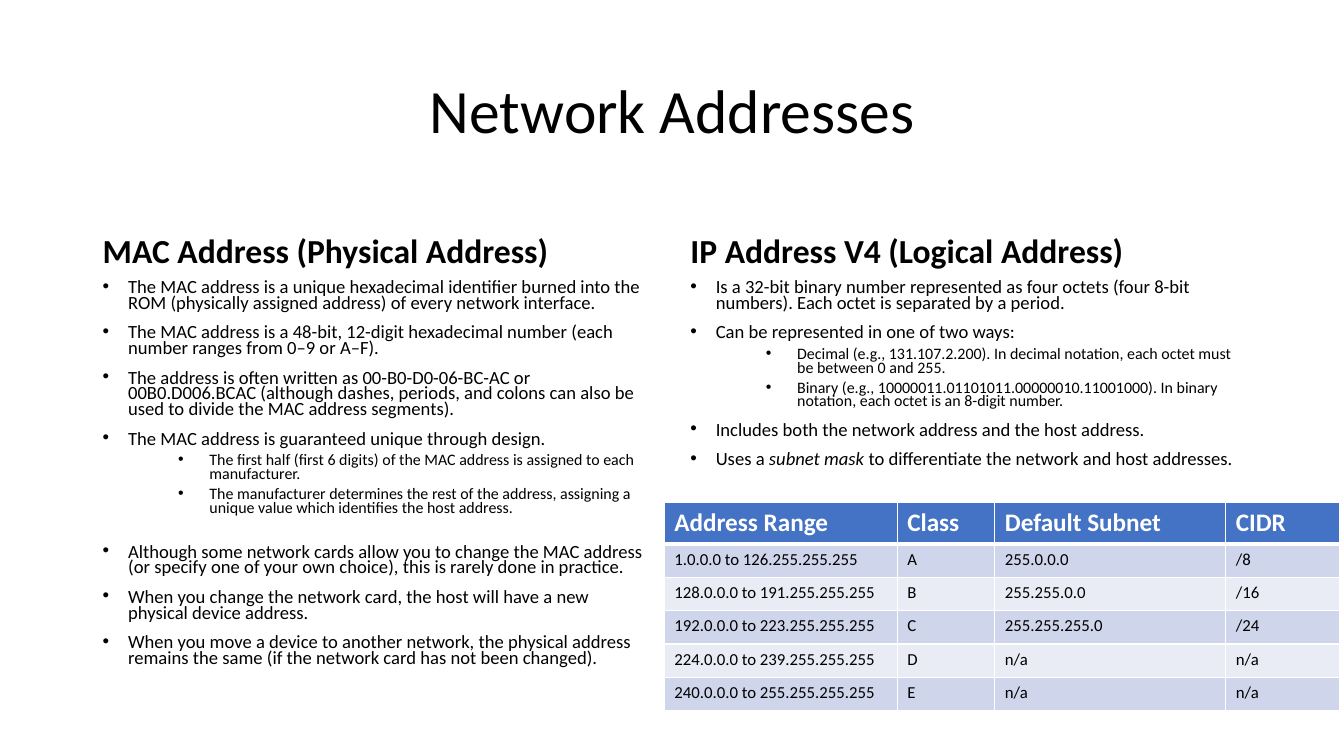
from dataclasses import dataclass

from lxml import etree
from pptx import Presentation
from pptx import util as u
from pptx.dml.color import RGBColor
from pptx.enum import text
from pptx.oxml import ns

FONT = "Calibri"
BLACK, WHITE, BLUE = "000000", "FFFFFF", "4472C4"
BANDS = ("CFD5EA", "E9EBF5")


@dataclass
class Box:
    left: float
    top: float
    width: float
    height: float


@dataclass
class Bullet:
    text: str  # parts between asterisks are italic
    size: float = 13.3
    before: float = 10
    margin: float = 0.64
    hang: float = 0.64


@dataclass
class Column:
    left: float
    width: float
    heading: str
    bullets: list[Bullet]


def sub_bullet(words: str) -> Bullet:
    return Bullet(words, size=11.4, before=5, margin=2.69, hang=0.79)


COLUMNS = [
    Column(2.34, 14.33, "MAC Address (Physical Address)", [
        Bullet("The MAC address is a unique hexadecimal identifier burned into the ROM "
               "(physically assigned address) of every network interface."),
        Bullet("The MAC address is a 48-bit, 12-digit hexadecimal number "
               "(each number ranges from 0–9 or A–F)."),
        Bullet("The address is often written as 00-B0-D0-06-BC-AC or 00B0.D006.BCAC (although "
               "dashes, periods, and colons can also be used to divide the MAC address segments)."),
        Bullet("The MAC address is guaranteed unique through design."),
        sub_bullet("The first half (first 6 digits) of the MAC address is assigned to each "
                   "manufacturer."),
        sub_bullet("The manufacturer determines the rest of the address, assigning a unique "
                   "value which identifies the host address."),
        Bullet("Although some network cards allow you to change the MAC address (or specify "
               "one of your own choice), this is rarely done in practice.", before=21.5),
        Bullet("When you change the network card, the host will have a new physical device "
               "address."),
        Bullet("When you move a device to another network, the physical address remains the "
               "same (if the network card has not been changed)."),
    ]),
    Column(17.15, 14.4, "IP Address V4 (Logical Address)", [
        Bullet("Is a 32-bit binary number represented as four octets (four 8-bit numbers). "
               "Each octet is separated by a period."),
        Bullet("Can be represented in one of two ways:"),
        sub_bullet("Decimal (e.g., 131.107.2.200). In decimal notation, each octet must be "
                   "between 0 and 255."),
        sub_bullet("Binary (e.g., 10000011.01101011.00000010.11001000). In binary notation, "
                   "each octet is an 8-digit number."),
        Bullet("Includes both the network address and the host address."),
        Bullet("Uses a *subnet mask* to differentiate the network and host addresses."),
    ]),
]

CLASSES = [
    ("Address Range", "Class", "Default Subnet", "CIDR"),
    ("1.0.0.0 to 126.255.255.255", "A", "255.0.0.0", "/8"),
    ("128.0.0.0 to 191.255.255.255", "B", "255.255.0.0", "/16"),
    ("192.0.0.0 to 223.255.255.255", "C", "255.255.255.0", "/24"),
    ("224.0.0.0 to 239.255.255.255", "D", "n/a", "n/a"),
    ("240.0.0.0 to 255.255.255.255", "E", "n/a", "n/a"),
]
CLASS_WIDTHS = (5.87, 2.46, 5.82, 2.87)
HEADER_HEIGHT, ROW_HEIGHT = 1.04, 0.84


def rgb(value: str) -> RGBColor:
    return RGBColor.from_string(value)


def style(p, size: float, color: str = BLACK, bold: bool = False) -> None:
    for r in p.runs:
        r.font.name = FONT
        r.font.size = u.Pt(size)
        r.font.bold = bold
        r.font.color.rgb = rgb(color)


def add_frame(slide, box: Box, anchor):
    sp = slide.shapes.add_textbox(u.Cm(box.left), u.Cm(box.top), u.Cm(box.width), u.Cm(box.height))
    tf = sp.text_frame
    tf.word_wrap = True
    tf.vertical_anchor = anchor
    return tf


def add_heading(slide, box: Box, words: str, size: float, anchor, align, bold: bool) -> None:
    p = add_frame(slide, box, anchor).paragraphs[0]
    p.text = words
    p.alignment = align
    p.line_spacing = 0.9
    style(p, size, bold=bold)


def add_bullets(slide, box: Box, bullets: list[Bullet]) -> None:
    tf = add_frame(slide, box, text.MSO_ANCHOR.TOP)
    for i, bullet in enumerate(bullets):
        p = tf.add_paragraph() if i else tf.paragraphs[0]
        for j, part in enumerate(bullet.text.split("*")):
            r = p.add_run()
            r.text = part
            r.font.italic = j % 2 == 1
        style(p, bullet.size)
        p.line_spacing = 0.7
        p.space_before = u.Pt(bullet.before)
        pPr = p._p.get_or_add_pPr()
        pPr.set("marL", str(u.Cm(bullet.margin)))
        pPr.set("indent", str(-u.Cm(bullet.hang)))
        etree.SubElement(pPr, ns.qn("a:buFont")).set("typeface", "Arial")
        etree.SubElement(pPr, ns.qn("a:buChar")).set("char", "•")


def set_borders(cell, top: float, bottom: float) -> None:
    tcPr = cell._tc.get_or_add_tcPr()
    for side, width in (("L", 1), ("R", 1), ("T", top), ("B", bottom)):
        ln = etree.SubElement(tcPr, ns.qn(f"a:ln{side}"))
        ln.set("w", str(u.Pt(width)))
        fill = etree.SubElement(ln, ns.qn("a:solidFill"))
        etree.SubElement(fill, ns.qn("a:srgbClr")).set("val", WHITE)


def add_class_table(slide, left: float, top: float) -> None:
    height = HEADER_HEIGHT + ROW_HEIGHT * (len(CLASSES) - 1)
    table = slide.shapes.add_table(len(CLASSES), len(CLASS_WIDTHS), u.Cm(left), u.Cm(top),
                                   u.Cm(sum(CLASS_WIDTHS)), u.Cm(height)).table
    for col, width in zip(table.columns, CLASS_WIDTHS):
        col.width = u.Cm(width)
    for i, values in enumerate(CLASSES):
        header = i == 0
        table.rows[i].height = u.Cm(HEADER_HEIGHT if header else ROW_HEIGHT)
        for j, value in enumerate(values):
            cell = table.cell(i, j)
            set_borders(cell, top=3 if i == 1 else 1, bottom=3 if header else 1)
            cell.fill.solid()
            cell.fill.fore_color.rgb = rgb(BLUE if header else BANDS[(i - 1) % 2])
            p = cell.text_frame.paragraphs[0]
            p.text = value
            style(p, 18 if header else 12, WHITE if header else BLACK, bold=header)


def main() -> None:
    prs = Presentation()
    prs.slide_width, prs.slide_height = u.Cm(33.87), u.Cm(19.05)
    slide = prs.slides.add_slide(prs.slide_layouts[6])

    # Title
    add_heading(slide, Box(2.34, 1.02, 29.21, 3.68), "Network Addresses", 44,
                text.MSO_ANCHOR.MIDDLE, text.PP_ALIGN.CENTER, bold=False)

    # Two columns of headed bullets
    for column in COLUMNS:
        add_heading(slide, Box(column.left, 4.67, column.width, 2.29), column.heading, 24,
                    text.MSO_ANCHOR.BOTTOM, text.PP_ALIGN.LEFT, bold=True)
        add_bullets(slide, Box(column.left, 6.96, column.width, 10.24), column.bullets)

    # Address classes
    add_class_table(slide, 16.74, 12.67)

    prs.save("out.pptx")


if __name__ == "__main__":
    main()
